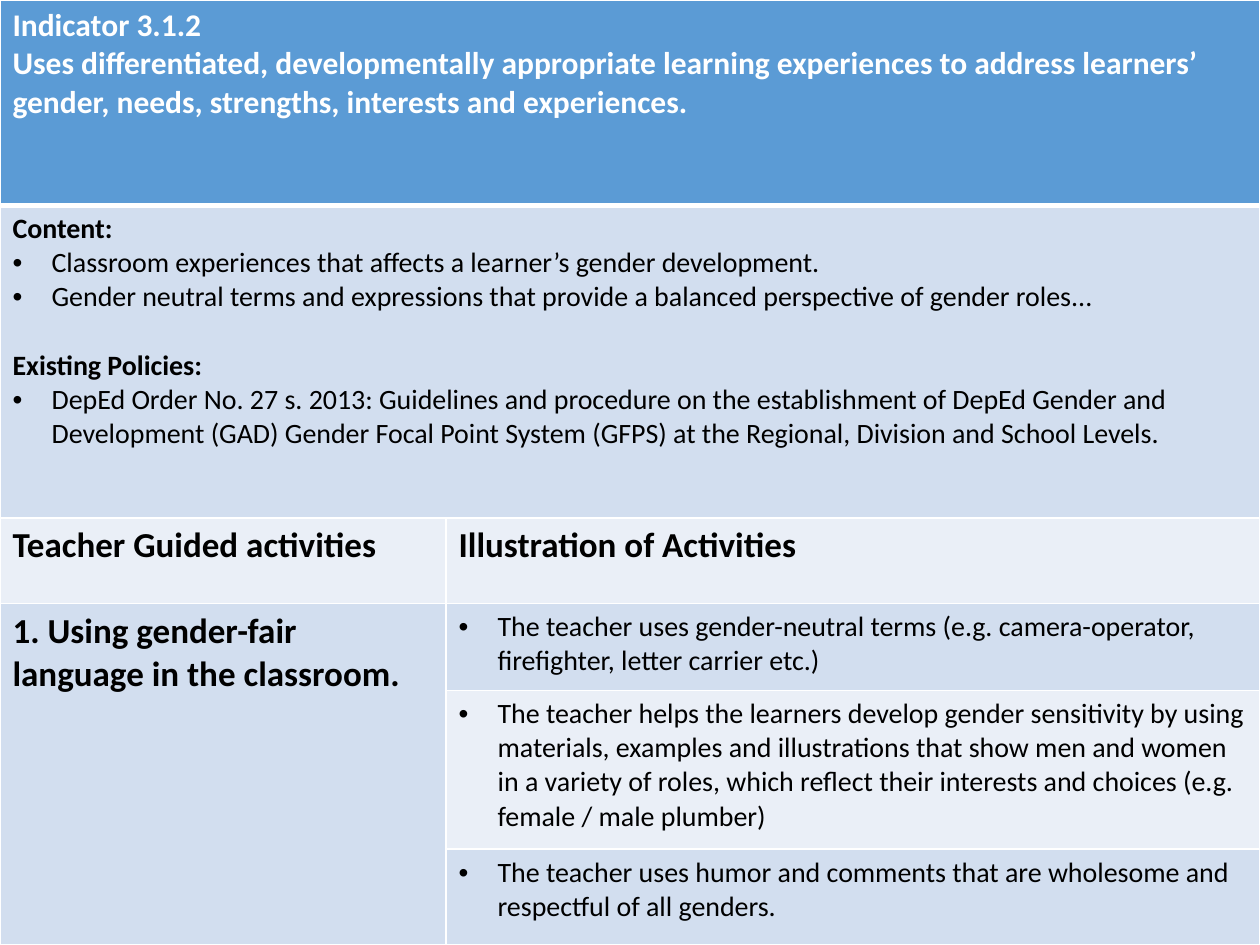
from dataclasses import dataclass

from lxml import etree
from pptx import Presentation
from pptx.dml.color import RGBColor
from pptx.oxml.ns import qn
from pptx.util import Inches, Pt

BLANK = 6
WHITE, BLACK = "FFFFFF", "000000"
BLUE, MID, PALE = "5B9BD5", "D2DEEF", "EAEFF7"
COLS = [3.54, 6.46]
ROWS = [1.63, 2.48, 0.68, 0.69, 1.26, 0.76]
THIN, THICK = 1, 3


@dataclass
class Para:
    text: str
    size: int = 16
    bold: bool = False
    color: str = BLACK
    bullet: bool = False
    gap: float = 0


@dataclass
class Block:
    row: int
    col: int
    fill: str
    paras: list[Para]
    tall: int = 1
    wide: int = 1


def item(text: str) -> Para:
    return Para(text, bullet=True)


def head(text: str) -> Para:
    return Para(text, size=20, bold=True)


def title(text: str) -> Para:
    return Para(text, size=18, bold=True, color=WHITE)


BLOCKS = [
    Block(0, 0, BLUE, [
        title("Indicator 3.1.2"),
        title("Uses differentiated, developmentally appropriate learning experiences "
              "to address learners’ gender, needs, strengths, interests and experiences."),
    ], wide=2),
    Block(1, 0, MID, [
        Para("Content:", bold=True),
        item("Classroom experiences that affects a learner’s gender development."),
        item("Gender neutral terms and expressions that provide a balanced "
             "perspective of gender roles..."),
        Para("Existing Policies:", bold=True, gap=19.5),
        item("DepEd Order No. 27 s. 2013: Guidelines and procedure on the establishment "
             "of DepEd Gender and Development (GAD) Gender Focal Point System (GFPS) "
             "at the Regional, Division and School Levels."),
    ], wide=2),
    Block(2, 0, PALE, [head("Teacher Guided activities")]),
    Block(2, 1, PALE, [head("Illustration of Activities")]),
    Block(3, 0, MID, [head("1. Using gender-fair language in the classroom.")], tall=3),
    Block(3, 1, MID, [item("The teacher uses gender-neutral terms (e.g. camera-operator, "
                           "firefighter, letter carrier etc.)")]),
    Block(4, 1, PALE, [item("The teacher helps the learners develop gender sensitivity by "
                            "using materials, examples and illustrations that show men and "
                            "women in a variety of roles, which reflect their interests and "
                            "choices (e.g. female / male plumber)")]),
    Block(5, 1, MID, [item("The teacher uses humor and comments that are wholesome and "
                           "respectful of all genders.")]),
]


def paint(form, color: str) -> None:
    form.solid()
    form.fore_color.rgb = RGBColor.from_string(color)


def add_dot(para) -> None:
    props = para._p.get_or_add_pPr()
    props.set("marL", str(Inches(0.31)))
    props.set("indent", str(-Inches(0.31)))
    etree.SubElement(props, qn("a:buFont"), typeface="Arial")
    etree.SubElement(props, qn("a:buChar"), char="•")


def write(frame, paras: list[Para]) -> None:
    for n, data in enumerate(paras):
        para = frame.paragraphs[0] if n == 0 else frame.add_paragraph()
        if data.bullet:
            add_dot(para)
        if data.gap:
            para.space_before = Pt(data.gap)
        run = para.add_run()
        run.text = data.text
        style = {"name": "Calibri", "size": Pt(data.size), "bold": data.bold}
        for key, value in style.items():
            setattr(run.font, key, value)
        paint(run.font.fill, data.color)


def edge(cell, row: int) -> None:
    props = cell._tc.get_or_add_tcPr()
    widths = {
        "a:lnL": THIN,
        "a:lnR": THIN,
        "a:lnT": THICK if row == 1 else THIN,
        "a:lnB": THICK if row == 0 else THIN,
    }
    for n, (tag, width) in enumerate(widths.items()):
        line = etree.Element(qn(tag), w=str(Pt(width)))
        fill = etree.SubElement(line, qn("a:solidFill"))
        etree.SubElement(fill, qn("a:srgbClr"), val=WHITE)
        props.insert(n, line)


def fill_block(table, block: Block) -> None:
    rows = range(block.row, block.row + block.tall)
    cols = range(block.col, block.col + block.wide)
    cells = [(table.cell(r, c), r) for r in rows for c in cols]
    first, last = cells[0][0], cells[-1][0]
    if len(cells) > 1:
        first.merge(last)
    for cell, row in cells:
        paint(cell.fill, block.fill)
        edge(cell, row)
    write(first.text_frame, block.paras)


def main() -> None:
    deck = Presentation()
    deck.slide_width, deck.slide_height = Inches(10), Inches(7.5)
    slide = deck.slides.add_slide(deck.slide_layouts[BLANK])
    frame = slide.shapes.add_table(len(ROWS), len(COLS), 0, 0, Inches(10), Inches(7.5))
    table = frame.table
    for col, width in zip(table.columns, COLS):
        col.width = Inches(width)
    for row, height in zip(table.rows, ROWS):
        row.height = Inches(height)
    for block in BLOCKS:
        fill_block(table, block)
    deck.save("out.pptx")


if __name__ == "__main__":
    main()
